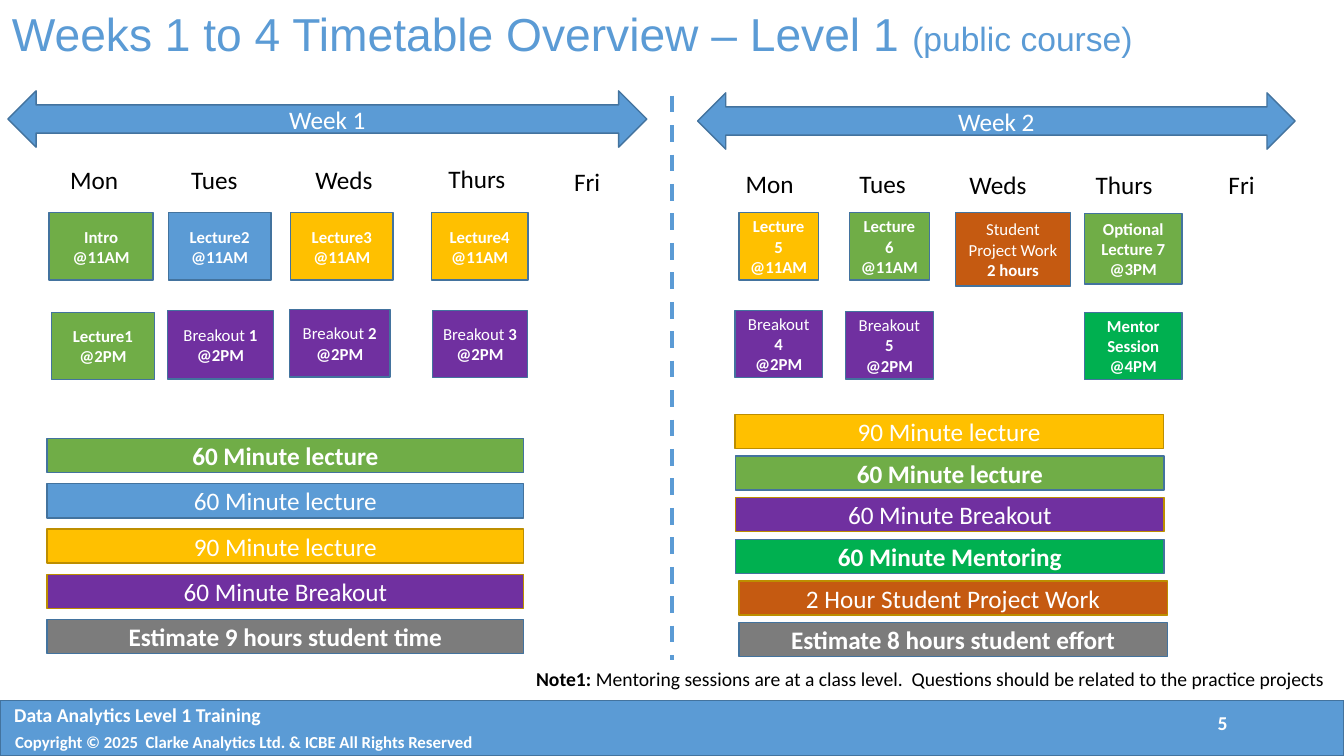
from dataclasses import dataclass
from typing import NamedTuple

from lxml.etree import SubElement
from pptx import Presentation
from pptx.dml.color import RGBColor
from pptx.enum.dml import MSO_LINE
from pptx.enum.shapes import MSO_CONNECTOR, MSO_SHAPE
from pptx.enum.text import MSO_ANCHOR, MSO_AUTO_SIZE, PP_ALIGN
from pptx.oxml.ns import qn
from pptx.slide import Slide
from pptx.text.text import TextFrame
from pptx.util import Cm, Pt

BLUE = RGBColor(0x5B, 0x9B, 0xD5)
DARK_BLUE = RGBColor(0x43, 0x73, 0x9E)
GREEN = RGBColor(0x70, 0xAD, 0x47)
BRIGHT_GREEN = RGBColor(0x00, 0xB0, 0x50)
GOLD = RGBColor(0xFF, 0xC0, 0x00)
DARK_GOLD = RGBColor(0xBD, 0x8E, 0x00)
PURPLE = RGBColor(0x70, 0x30, 0xA0)
ORANGE = RGBColor(0xC5, 0x5A, 0x11)
GREY = RGBColor(0x7C, 0x7C, 0x7C)
WHITE = RGBColor(0xFF, 0xFF, 0xFF)
BLACK = RGBColor(0x00, 0x00, 0x00)


class Box(NamedTuple):
    left: float
    top: float
    width: float
    height: float


class Words(NamedTuple):
    text: str
    bold: bool = False
    size: float | None = None


Lines = list[list[Words]]


@dataclass
class Session:
    box: Box
    fill: RGBColor
    lines: Lines


@dataclass
class Bar:
    left: float
    text: str
    fill: RGBColor
    outline: RGBColor = DARK_BLUE
    bold: bool = False


@dataclass
class Week:
    name: str
    arrow: Box
    days: list[tuple[float, float]]
    bars: list[Bar]
    bar_top: float
    bar_pitch: float
    bar_width: float


@dataclass
class Label:
    box: Box
    line: list[Words]
    size: float
    colour: RGBColor = WHITE
    wrap: bool = False
    align: PP_ALIGN = PP_ALIGN.LEFT


def lecture(name: str, time: str) -> Lines:
    return [[Words(name, True)], [Words(time, True)]]


def breakout(number: int) -> Lines:
    return [[Words("Breakout"), Words(f" {number}", True)], [Words("@2PM", True)]]


DAY_NAMES = ["Mon", "Tues", "Weds", "Thurs", "Fri"]
DAY_WIDTHS = [1.73, 1.7, 1.96, 1.96, 1.17]
BAR_HEIGHT = 0.86

WEEKS = [
    Week("Week 1", Box(0.2, 2.29, 16.1, 1.42),
         [(1.52, 4.01), (4.57, 4.01), (7.7, 4.01), (11.05, 3.99), (14.22, 4.06)],
         [Bar(1.19, "60 Minute lecture", GREEN, bold=True),
          Bar(1.19, "60 Minute lecture", BLUE),
          Bar(1.19, "90 Minute lecture", GOLD, DARK_GOLD),
          Bar(1.19, "60 Minute Breakout", PURPLE, DARK_GOLD),
          Bar(1.19, "Estimate 9 hours student time", GREY, bold=True)],
         11.05, 1.14, 12.01),
    Week("Week 2", Box(17.58, 2.34, 15.06, 1.42),
         [(18.54, 4.11), (21.41, 4.11), (24.18, 4.14), (27.36, 4.14), (30.71, 4.14)],
         [Bar(18.52, "90 Minute lecture", GOLD, DARK_GOLD),
          Bar(18.54, "60 Minute lecture", GREEN, bold=True),
          Bar(18.54, "60 Minute Breakout", PURPLE, DARK_GOLD),
          Bar(18.54, "60 Minute Mentoring", BRIGHT_GREEN, bold=True),
          Bar(18.62, "2 Hour Student Project Work", ORANGE, DARK_GOLD),
          Bar(18.62, "Estimate 8 hours student effort", GREY, bold=True)],
         10.44, 1.05, 10.8),
]

SESSIONS = [
    Session(Box(1.24, 5.36, 2.62, 1.7), GREEN, lecture("Intro", "@11AM")),
    Session(Box(4.24, 5.36, 2.59, 1.7), BLUE, lecture("Lecture2", "@11AM")),
    Session(Box(7.32, 5.36, 2.59, 1.7), GOLD, lecture("Lecture3", "@11AM")),
    Session(Box(10.87, 5.36, 2.44, 1.7), GOLD, lecture("Lecture4", "@11AM")),
    Session(Box(1.3, 7.87, 2.59, 1.7), GREEN, lecture("Lecture1", "@2PM")),
    Session(Box(4.22, 7.82, 2.67, 1.73), PURPLE, breakout(1)),
    Session(Box(7.29, 7.8, 2.54, 1.7), PURPLE, breakout(2)),
    Session(Box(10.9, 7.82, 2.39, 1.7), PURPLE, breakout(3)),
    Session(Box(18.62, 5.36, 2.01, 1.7), GOLD, lecture("Lecture5", "@11AM")),
    Session(Box(21.41, 5.36, 2.01, 1.7), GREEN, lecture("Lecture6", "@11AM")),
    Session(Box(24.08, 5.36, 2.9, 1.85), ORANGE,
            [[Words("Student")], [Words("Project Work")], [Words("2 hours", True)]]),
    Session(Box(27.33, 5.38, 2.46, 1.78), GREEN, lecture("Optional Lecture 7", "@3PM")),
    Session(Box(18.52, 7.82, 2.21, 1.7), PURPLE, breakout(4)),
    Session(Box(21.31, 7.85, 2.21, 1.7), PURPLE, breakout(5)),
    Session(Box(27.33, 7.87, 2.46, 1.7), BRIGHT_GREEN, lecture("Mentor Session", "@4PM")),
]

LABELS = [
    Label(Box(13.26, 16.69, 20.6, 0.86),
          [Words("Note1: ", True),
           Words("Mentoring sessions are at a class level.  Questions should be "
                 "related to the practice projects")], 14, BLACK, True),
    Label(Box(0.08, 17.6, 6.78, 0.86), [Words("Data Analytics Level 1 Training", True)],
          14, align=PP_ALIGN.CENTER),
    Label(Box(0.13, 18.31, 14.73, 0.76),
          [Words("Copyright © 2025  Clarke Analytics Ltd. & ICBE All Rights Reserved", True)],
          12, wrap=True),
    Label(Box(30.43, 17.78, 0.76, 0.86), [Words("5", True)], 14, align=PP_ALIGN.CENTER),
]


def write(frame: TextFrame, lines: Lines, size: float, colour: RGBColor,
          align: PP_ALIGN, font_name: str = "Calibri") -> None:
    for index, line in enumerate(lines):
        paragraph = frame.add_paragraph() if index else frame.paragraphs[0]
        paragraph.alignment = align
        for words in line:
            run = paragraph.add_run()
            run.text = words.text
            run.font.name = font_name
            run.font.size = Pt(words.size or size)
            run.font.bold = words.bold
            run.font.color.rgb = colour


def add_block(slide: Slide, kind: MSO_SHAPE, box: Box, fill: RGBColor,
              lines: Lines, size: float = 18, outline: RGBColor = DARK_BLUE) -> None:
    shape = slide.shapes.add_shape(kind, *map(Cm, box))
    shape.shadow.inherit = False
    shape.fill.solid()
    shape.fill.fore_color.rgb = fill
    shape.line.color.rgb = outline
    shape.line.width = Pt(1)
    shape.text_frame.vertical_anchor = MSO_ANCHOR.MIDDLE
    write(shape.text_frame, lines, size, WHITE, PP_ALIGN.CENTER)


def add_label(slide: Slide, label: Label) -> None:
    frame = slide.shapes.add_textbox(*map(Cm, label.box)).text_frame
    frame.word_wrap = label.wrap
    frame.auto_size = MSO_AUTO_SIZE.SHAPE_TO_FIT_TEXT
    write(frame, [label.line], label.size, label.colour, label.align)


def add_title(slide: Slide) -> None:
    title = slide.shapes.title
    title.left, title.top, title.width, title.height = map(Cm, (0.3, 0.05, 29.72, 1.75))
    frame = title.text_frame
    frame.margin_left = frame.margin_top = frame.margin_right = frame.margin_bottom = 0
    frame.vertical_anchor = MSO_ANCHOR.MIDDLE
    frame.auto_size = MSO_AUTO_SIZE.NONE
    line = [Words("Weeks 1 to 4 Timetable Overview – Level 1 "),
            Words("(public course)", size=24)]
    write(frame, [line], 33, BLUE, PP_ALIGN.LEFT, "Arial")
    frame.paragraphs[0].line_spacing = 0.9


def add_divider(slide: Slide) -> None:
    divider = slide.shapes.add_connector(
        MSO_CONNECTOR.STRAIGHT, Cm(16.94), Cm(2.41), Cm(16.94), Cm(16.64))
    divider.line.color.rgb = BLUE
    divider.line.width = Pt(3)
    divider.line.dash_style = MSO_LINE.DASH
    SubElement(divider.element.spPr, qn("a:effectLst"))


def add_week(slide: Slide, week: Week) -> None:
    add_block(slide, MSO_SHAPE.LEFT_RIGHT_ARROW, week.arrow, BLUE, [[Words(week.name)]])
    for name, width, (left, top) in zip(DAY_NAMES, DAY_WIDTHS, week.days):
        add_label(slide, Label(Box(left, top, width, 1.02), [Words(name)], 18, BLACK))
    for index, bar in enumerate(week.bars):
        box = Box(bar.left, week.bar_top + index * week.bar_pitch, week.bar_width, BAR_HEIGHT)
        add_block(slide, MSO_SHAPE.RECTANGLE, box, bar.fill,
                  [[Words(bar.text, bar.bold)]], outline=bar.outline)


def main() -> None:
    presentation = Presentation()
    presentation.slide_width, presentation.slide_height = Cm(33.87), Cm(19.05)
    slide = presentation.slides.add_slide(presentation.slide_layouts[5])
    add_title(slide)
    add_block(slide, MSO_SHAPE.RECTANGLE, Box(0, 17.65, 33.87, 1.4), BLUE, [])
    for week in WEEKS:
        add_week(slide, week)
    for session in SESSIONS:
        add_block(slide, MSO_SHAPE.RECTANGLE, session.box, session.fill, session.lines, 12)
    add_divider(slide)
    for label in LABELS:
        add_label(slide, label)
    presentation.save("out.pptx")


if __name__ == "__main__":
    main()
